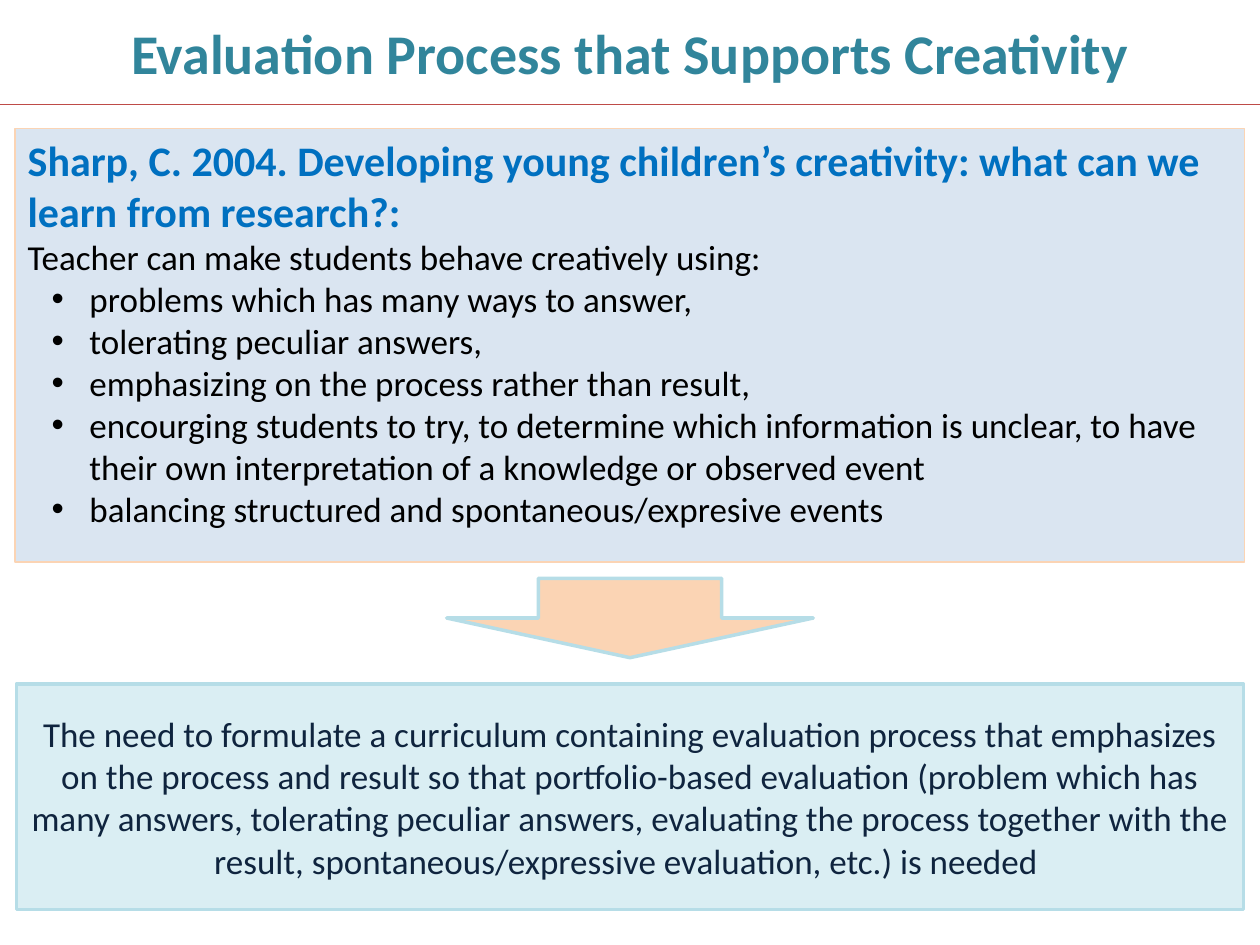
from dataclasses import dataclass

from lxml.etree import SubElement
from pptx import Presentation
from pptx.dml.color import RGBColor
from pptx.enum.shapes import MSO_CONNECTOR, MSO_SHAPE
from pptx.enum.text import MSO_ANCHOR, MSO_AUTO_SIZE, PP_ALIGN
from pptx.oxml.ns import qn
from pptx.util import Emu, Inches, Pt

WIDE, HIGH = Inches(10), Inches(7.5)


@dataclass(frozen=True)
class Theme:
    font: str = "Calibri"
    title: str = "31859B"
    rule: str = "BE4B48"
    head: str = "0070C0"
    text: str = "000000"
    note: str = "0F243E"
    panel: str = "DAE5F1"
    peach: str = "FBD4B4"
    aqua: str = "DAEEF3"
    edge: str = "B6DDE7"
    large: float = 32
    mid: float = 24
    small: float = 20
    thin: float = 0.75
    thick: float = 2


@dataclass(frozen=True)
class Box:
    """A centred area: top, width and height in inches."""
    top: float
    width: float
    height: float

    def place(self) -> tuple[Emu, Emu, Emu, Emu]:
        width = Inches(self.width)
        return Emu((WIDE - width) // 2), Inches(self.top), width, Inches(self.height)


@dataclass(frozen=True)
class Line:
    text: str
    size: float
    color: str
    bold: bool = False
    align: PP_ALIGN = PP_ALIGN.LEFT
    left: float = 0
    hang: float = 0
    bullet: bool = False


THEME = Theme()
TITLE = Box(0, 10, 0.83)
PANEL = Box(1.02, 9.76, 3.44)
ARROW = Box(4.59, 2.91, 0.63)
NOTE = Box(5.43, 9.74, 1.79)

POINTS = (
    "problems which has many ways to answer,",
    "tolerating peculiar answers,",
    "emphasizing on the process rather than result,",
    "encourging students to try, to determine which information is unclear, "
    "to have their own interpretation of a knowledge or observed event",
    "balancing structured and spontaneous/expresive events",
)


def paint(shape, fill: str, edge: str, width: float) -> None:
    shape.fill.solid()
    shape.fill.fore_color.rgb = RGBColor.from_string(fill)
    shape.line.color.rgb = RGBColor.from_string(edge)
    shape.line.width = Pt(width)


def write(shape, lines: list[Line], anchor: MSO_ANCHOR) -> None:
    frame = shape.text_frame
    frame.word_wrap = True
    frame.auto_size = MSO_AUTO_SIZE.NONE
    frame.vertical_anchor = anchor
    for i, line in enumerate(lines):
        para = frame.add_paragraph() if i else frame.paragraphs[0]
        para.level = int(line.bullet)
        para.alignment = line.align
        para.space_before = para.space_after = Pt(0)
        props = para._p.get_or_add_pPr()
        props.set("marL", str(Inches(line.left)))
        props.set("indent", str(Inches(-line.hang)))
        if line.bullet:
            SubElement(props, qn("a:buFont"), typeface="Arial")
            SubElement(props, qn("a:buChar"), char="•")
        else:
            SubElement(props, qn("a:buNone"))
        run = para.add_run()
        run.text = line.text
        font = run.font
        font.name, font.size, font.bold = THEME.font, Pt(line.size), line.bold
        font.color.rgb = RGBColor.from_string(line.color)


def move(shape, box: Box) -> None:
    shape.left, shape.top, shape.width, shape.height = box.place()


def block(slide, kind: MSO_SHAPE, box: Box, fill: str):
    """Add a preset shape with the thick edge."""
    shape = slide.shapes.add_shape(kind, *box.place())
    shape.shadow.inherit = False
    paint(shape, fill, THEME.edge, THEME.thick)
    return shape


def rule(slide, top: float) -> None:
    """Draw a line across the full slide."""
    y = Inches(top)
    line = slide.shapes.add_connector(MSO_CONNECTOR.STRAIGHT, 0, y, WIDE, y)
    line.line.color.rgb = RGBColor.from_string(THEME.rule)
    line.line.width = Pt(THEME.thin)
    SubElement(line._element.spPr, qn("a:effectLst"))


def main() -> None:
    deck = Presentation()
    deck.slide_width, deck.slide_height = WIDE, HIGH
    slide = deck.slides.add_slide(deck.slide_layouts[1])

    title = slide.shapes.title
    move(title, TITLE)
    write(title, [Line("Evaluation Process that Supports Creativity", THEME.large,
                       THEME.title, True, PP_ALIGN.CENTER)], MSO_ANCHOR.MIDDLE)
    rule(slide, TITLE.height)

    body = slide.placeholders[1]
    move(body, PANEL)
    paint(body, THEME.panel, THEME.peach, THEME.thin)
    lines = [
        Line("Sharp, C. 2004. Developing young children’s creativity: "
             "what can we learn from research?:", THEME.mid, THEME.head, True),
        Line("Teacher can make students behave creatively using:",
             THEME.small, THEME.text, left=0.3, hang=0.3),
    ]
    lines += [Line(point, THEME.small, THEME.text, left=0.49, hang=0.3, bullet=True)
              for point in POINTS]
    write(body, lines, MSO_ANCHOR.TOP)

    block(slide, MSO_SHAPE.DOWN_ARROW, ARROW, THEME.peach)
    note = block(slide, MSO_SHAPE.RECTANGLE, NOTE, THEME.aqua)
    write(note, [Line(
        "The need to formulate a curriculum containing evaluation process that "
        "emphasizes on the process and result so that portfolio-based evaluation "
        "(problem which has many answers, tolerating peculiar answers, evaluating "
        "the process together with the result, spontaneous/expressive evaluation, "
        "etc.) is needed ", THEME.small, THEME.note, align=PP_ALIGN.CENTER)],
        MSO_ANCHOR.MIDDLE)

    deck.save("out.pptx")


if __name__ == "__main__":
    main()
